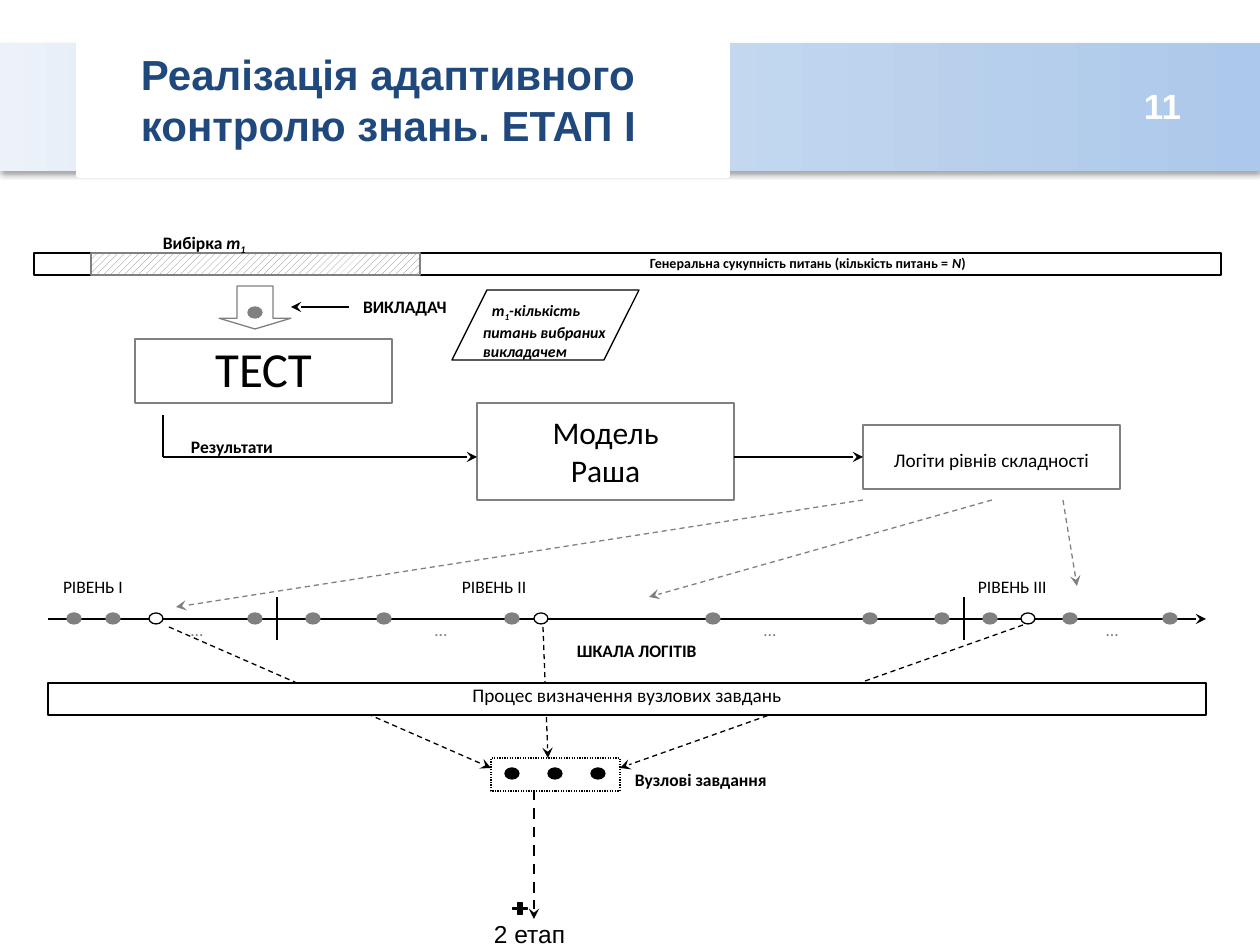
from copy import deepcopy
from dataclasses import dataclass
from typing import Optional

from lxml.etree import SubElement
from pptx import Presentation
from pptx.dml.color import RGBColor
from pptx.enum.dml import MSO_LINE as Dash, MSO_PATTERN as Pattern
from pptx.enum.shapes import MSO_CONNECTOR as Conn, MSO_SHAPE as Kind
from pptx.enum.text import MSO_ANCHOR as Anchor, PP_ALIGN as Align
from pptx.oxml.ns import qn
from pptx.util import Emu, Pt

BLACK = RGBColor(0, 0, 0)
WHITE = RGBColor(255, 255, 255)
GRAY = RGBColor(128, 128, 128)
NAVY = RGBColor(0x1F, 0x49, 0x7D)
BAND = [(0, RGBColor(0xAC, 0xC8, 0xEA)), (0.8, RGBColor(0xD8, 0xE5, 0xF4)),
        (1, RGBColor(0xED, 0xF2, 0xF9))]
SCALE = 914400 / 126


def px(n: float) -> Emu:
    return Emu(round(n * SCALE))


@dataclass
class Run:
    text: str
    size: int = 10
    bold: bool = False
    italic: bool = False
    sub: bool = False
    color: RGBColor = BLACK
    font: str = "Calibri"


@dataclass
class Box:
    x: int
    y: int
    w: int
    h: int
    line: RGBColor = BLACK
    fill: Optional[RGBColor] = WHITE
    width: float = 0.75
    kind: Kind = Kind.RECTANGLE
    dash: Optional[Dash] = None
    adj: tuple = ()


@dataclass
class Line:
    x1: int
    y1: int
    x2: int
    y2: int
    color: RGBColor = BLACK
    width: float = 0.75
    dash: Optional[Dash] = None
    head: bool = True


@dataclass
class Label:
    x: int
    y: int
    w: int
    h: int
    runs: list


def draw_box(slide, box: Box):
    shape = slide.shapes.add_shape(box.kind, px(box.x), px(box.y), px(box.w), px(box.h))
    shape.shadow.inherit = False
    for i, value in enumerate(box.adj):
        shape.adjustments[i] = value
    if box.fill is not None:
        shape.fill.solid()
        shape.fill.fore_color.rgb = box.fill
    shape.line.color.rgb = box.line
    shape.line.width = Pt(box.width)
    if box.dash:
        shape.line.dash_style = box.dash
    return shape


def draw_line(slide, line: Line):
    conn = slide.shapes.add_connector(Conn.STRAIGHT, px(line.x1), px(line.y1),
                                      px(line.x2), px(line.y2))
    conn.line.color.rgb = line.color
    conn.line.width = Pt(line.width)
    if line.dash:
        conn.line.dash_style = line.dash
    props = conn._element.spPr
    if line.head:
        SubElement(props.find(qn("a:ln")), qn("a:tailEnd"), type="stealth")
    SubElement(props, qn("a:effectLst"))
    return conn


def write(shape, lines: list, align=Align.LEFT, inset=(0, 0), after: int = 10):
    """Fill a shape with paragraphs, each a list of runs; a run of newline breaks the line."""
    frame = shape.text_frame
    frame.word_wrap = True
    frame.vertical_anchor = Anchor.TOP
    frame.margin_left, frame.margin_top = px(inset[0]), px(inset[1])
    frame.margin_right = frame.margin_bottom = 0
    for i, runs in enumerate(lines):
        para = frame.add_paragraph() if i else frame.paragraphs[0]
        para.alignment = align
        para.space_after = Pt(after)
        for item in runs:
            if item.text == "\n":
                para.add_line_break()
                continue
            run = para.add_run()
            run.text = item.text
            font = run.font
            font.name, font.size = item.font, Pt(item.size)
            font.bold, font.italic = item.bold, item.italic
            font.color.rgb = item.color
            if item.sub:
                font._element.set("baseline", "-25000")


def draw_label(slide, label: Label):
    shape = slide.shapes.add_textbox(px(label.x), px(label.y), px(label.w), px(label.h))
    write(shape, [label.runs])
    return shape


def draw_head(slide) -> None:
    band = draw_box(slide, Box(0, 43, 1260, 128, fill=None))
    band.line.fill.background()
    band.fill.gradient()
    props = band._element.spPr
    stops = props.find(".//" + qn("a:gsLst"))
    stops.append(deepcopy(stops[-1]))
    for stop, (pos, color) in zip(band.fill.gradient_stops, BAND):
        stop.position, stop.color.rgb = pos, color
    band.fill.gradient_angle = 180
    shade = SubElement(props.find(qn("a:effectLst")), qn("a:outerShdw"), blurRad=str(Pt(3.1)),
                       dist=str(Pt(1.8)), dir="5400000", rotWithShape="0")
    tint = SubElement(shade, qn("a:srgbClr"), val=str(BLACK))
    SubElement(tint, qn("a:alpha"), val="35000")

    draw_box(slide, Box(78, 29, 650, 147, WHITE, width=2))
    title = slide.shapes.add_textbox(px(128), px(43), px(689), px(115))
    write(title, [[Run(text, 24, True, color=NAVY, font="Arial")] for text in
                  ("Реалізація адаптивного", "контролю знань. ЕТАП І")], inset=(13, 6), after=0)
    number = slide.shapes.add_textbox(px(1131), px(78), px(78), px(55))
    write(number, [[Run("11", 20, True, color=WHITE, font="Arial")]], inset=(13, 6), after=0)


NODE = Box(491, 758, 129, 33, dash=Dash.ROUND_DOT)
FLOWS = [Line(1023, 625, 620, 768, dash=Dash.DASH), Line(543, 627, 548, 758, dash=Dash.DASH),
         Line(169, 627, 491, 768, dash=Dash.DASH)]
SHAPES = [Box(34, 253, 1187, 22), Box(219, 286, 72, 43, GRAY, kind=Kind.DOWN_ARROW, adj=(0.5, 0.25)),
          Box(452, 290, 187, 70, kind=Kind.PARALLELOGRAM, adj=(0.5,)),
          Box(513, 903, 14, 11, fill=BLACK, kind=Kind.CROSS, adj=(0.425,))]
LINES = [Line(48, 619, 1206, 619, width=1), Line(349, 307, 291, 307, width=1),
         Line(163, 415, 163, 457, head=False), Line(163, 457, 477, 457),
         *[Line(x, 597, x, 640, head=False) for x in (277, 964)],
         Line(863, 500, 176, 607, GRAY, dash=Dash.DASH),
         Line(992, 500, 649, 597, GRAY, dash=Dash.DASH),
         Line(1063, 500, 1077, 586, GRAY, dash=Dash.DASH),
         Line(534, 790, 534, 919, width=1.5, dash=Dash.DASH)]
TASKS = [67, 106, 248, 306, 377, 505, 706, 863, 935, 983, 1063, 1163]
KEYS = [149, 534, 1021]
DOTS = [*[(x, 613, GRAY, GRAY) for x in TASKS], *[(x, 613, BLACK, WHITE) for x in KEYS],
        *[(505 + 43 * i, 768, BLACK, BLACK) for i in range(3)], (248, 307, GRAY, GRAY)]
LABELS = [
    Label(650, 255, 343, 20, [Run("Генеральна сукупність питань (кількість питань = ", 8, True),
                              Run("N", 8, True, True), Run(")", 8, True)]),
    Label(163, 232, 200, 21, [Run("Вибірка ", bold=True), Run("m", bold=True, italic=True),
                              Run("1", bold=True, italic=True, sub=True)]),
    *[Label(x, y, w, 21, [Run(text, bold=True)]) for x, y, w, text in (
        (191, 436, 200, "Результати"), (363, 296, 171, "ВИКЛАДАЧ"),
        (577, 640, 329, "ШКАЛА ЛОГІТІВ"), (635, 769, 229, "Вузлові завдання"))],
    *[Label(x, 576, 171, 21, [Run(text)]) for x, text in (
        (63, "РІВЕНЬ І"), (462, "РІВЕНЬ ІІ"), (978, "РІВЕНЬ ІІІ"))],
    *[Label(x, 619, 57, 21, [Run("…", color=GRAY)]) for x in (191, 435, 764, 1106)]]


def main() -> None:
    prs = Presentation()
    prs.slide_width, prs.slide_height = px(1260), px(945)
    slide = prs.slides.add_slide(prs.slide_layouts[6])
    draw_head(slide)

    for line in FLOWS:
        draw_line(slide, line)
    for box in [NODE, *SHAPES]:
        draw_box(slide, box)
    sample = draw_box(slide, Box(91, 253, 329, 22, GRAY, fill=None))
    sample.fill.patterned()
    sample.fill.pattern = Pattern.WIDE_UPWARD_DIAGONAL
    sample.fill.fore_color.rgb, sample.fill.back_color.rgb = GRAY, WHITE

    test = draw_box(slide, Box(135, 339, 257, 64, GRAY, width=1.5))
    write(test, [[Run("ТЕСТ", 28)]], Align.CENTER)
    model = draw_box(slide, Box(477, 403, 257, 97, GRAY, width=1.5))
    write(model, [[Run("Модель", 18), Run("\n"), Run("Раша", 18)]], Align.CENTER, (0, 10))
    logits = draw_box(slide, Box(863, 425, 257, 64, GRAY, width=1.5))
    write(logits, [[Run("Логіти рівнів складності", 11)]], Align.CENTER, (0, 23))
    process = draw_box(slide, Box(48, 683, 1158, 32, width=1.5))
    write(process, [[Run("Процес визначення вузлових завдань", 11)]], Align.CENTER)

    for line in LINES:
        draw_line(slide, line)
    draw_line(slide, Line(734, 457, 863, 457)).end_connect(logits, 1)
    for x, y, edge, fill in DOTS:
        draw_box(slide, Box(x, y, 14, 11, edge, fill, kind=Kind.OVAL))
    for label in LABELS:
        draw_label(slide, label)

    note = draw_label(slide, Label(483, 301, 137, 40, [
        Run("m", 9, True, True), Run("1", 9, True, True, True),
        Run("-кількість питань вибраних викладачем", 9, True, True)]))
    note.text_frame.paragraphs[0]._p.get_or_add_pPr().set("indent", str(px(9)))
    stage = slide.shapes.add_textbox(px(472), px(906), px(137), px(50))
    write(stage, [[Run("2 етап", 14, font="Arial")]], inset=(22, 13), after=0)
    prs.save("out.pptx")


if __name__ == "__main__":
    main()
